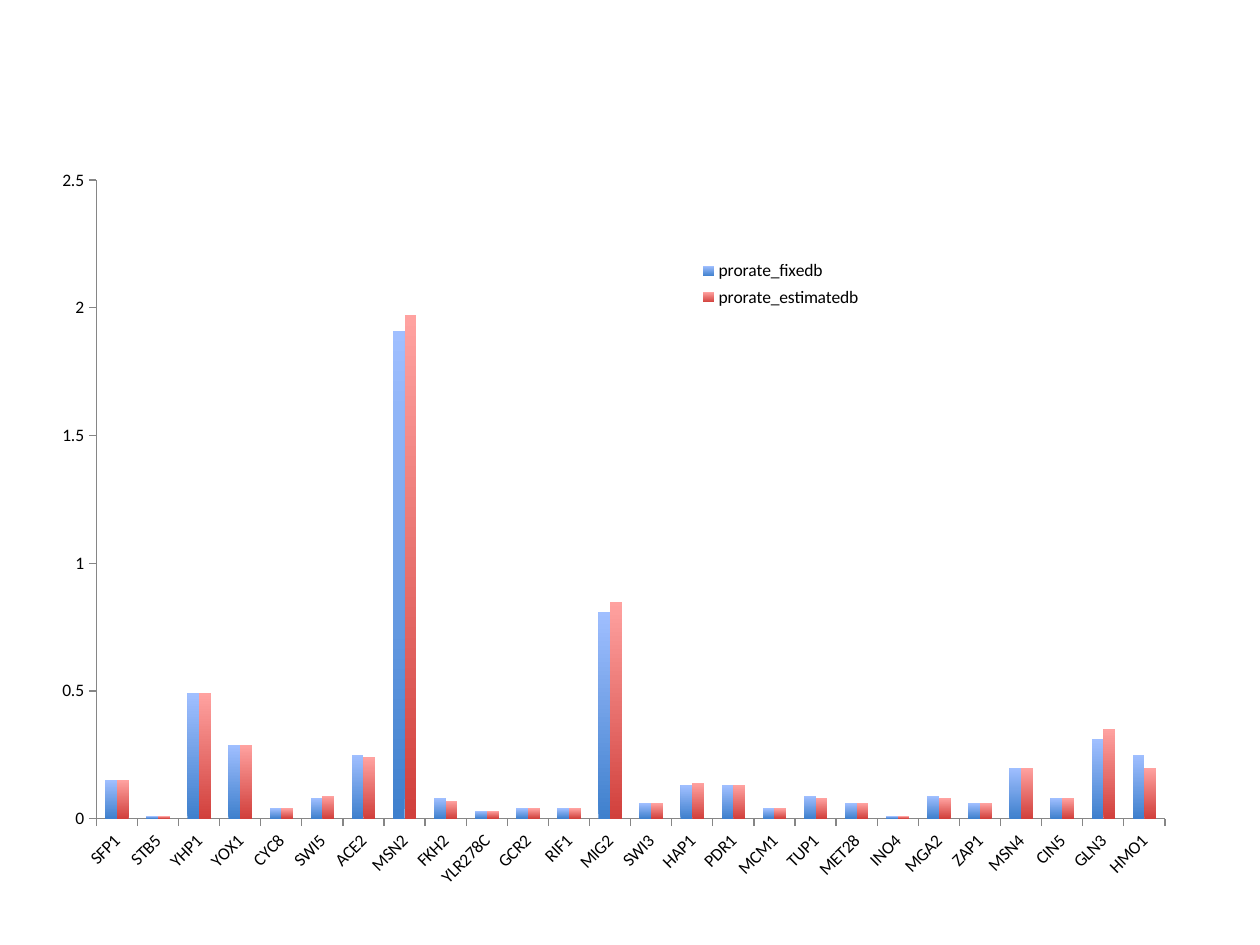
from lxml import etree
from pptx import Presentation
from pptx.chart.data import CategoryChartData
from pptx.dml.color import RGBColor
from pptx.enum.chart import XL_CHART_TYPE, XL_LEGEND_POSITION, XL_TICK_MARK
from pptx.oxml.ns import qn
from pptx.util import Pt

COLUMN_CLUSTERED = XL_CHART_TYPE.COLUMN_CLUSTERED
LEGEND_RIGHT = XL_LEGEND_POSITION.RIGHT
TICK_OUTSIDE = XL_TICK_MARK.OUTSIDE
TICK_NONE = XL_TICK_MARK.NONE

GENES = [
    "SFP1", "STB5", "YHP1", "YOX1", "CYC8", "SWI5", "ACE2", "MSN2", "FKH2",
    "YLR278C", "GCR2", "RIF1", "MIG2", "SWI3", "HAP1", "PDR1", "MCM1", "TUP1",
    "MET28", "INO4", "MGA2", "ZAP1", "MSN4", "CIN5", "GLN3", "HMO1",
]
RATES = {
    "prorate_fixedb": [
        0.15, 0.01, 0.49, 0.29, 0.04, 0.08, 0.25, 1.91, 0.08, 0.03, 0.04, 0.04, 0.81,
        0.06, 0.13, 0.13, 0.04, 0.09, 0.06, 0.01, 0.09, 0.06, 0.2, 0.08, 0.31, 0.25,
    ],
    "prorate_estimatedb": [
        0.15, 0.01, 0.49, 0.29, 0.04, 0.09, 0.24, 1.97, 0.07, 0.03, 0.04, 0.04, 0.85,
        0.06, 0.14, 0.13, 0.04, 0.08, 0.06, 0.01, 0.08, 0.06, 0.2, 0.08, 0.35, 0.2,
    ],
}
GRADIENTS = [("3F80CD", "A0BFFF"), ("D1403C", "FFA2A0")]


def color(value):
    """Turn a hex string into a colour."""
    return RGBColor.from_string(value)


def format_font(font, name="Calibri", size=10, fill="000000"):
    """Set the typeface, size and colour of a font."""
    font.name = name
    font.size = Pt(size)
    font.color.rgb = color(fill)


def make_layout(x, y, w, h, inner=False):
    """Return a manual chart layout in fractions of the chart."""
    layout = etree.Element(qn("c:layout"))
    manual = etree.SubElement(layout, qn("c:manualLayout"))
    settings = [("layoutTarget", "inner")] if inner else []
    settings += [("xMode", "edge"), ("yMode", "edge")]
    settings += [("x", x), ("y", y), ("w", w), ("h", h)]
    for tag, value in settings:
        etree.SubElement(manual, qn(f"c:{tag}")).set("val", str(value))
    return layout


def drop_layout(element):
    """Remove any layout that an element already has."""
    for layout in element.findall(qn("c:layout")):
        element.remove(layout)


def style_axis(axis):
    """Give an axis a grey line, outside ticks and no gridlines."""
    axis.has_major_gridlines = False
    axis.major_tick_mark = TICK_OUTSIDE
    axis.minor_tick_mark = TICK_NONE
    axis.format.line.color.rgb = color("868686")
    axis.format.line.width = Pt(0.75)
    format_font(axis.tick_labels.font)


def style_legend(chart):
    """Place the legend over the empty upper part of the plot."""
    chart.has_legend = True
    legend = chart.legend
    legend.position = LEGEND_RIGHT
    legend.include_in_layout = False
    format_font(legend.font)
    element = chart._chartSpace.find(".//" + qn("c:legend"))
    drop_layout(element)
    element.find(qn("c:legendPos")).addnext(make_layout(0.56, 0.13, 0.15, 0.08))


def add_rate_chart(slide, left, top, width, height):
    """Add the clustered column chart of rates in the given box."""
    data = CategoryChartData(number_format="General")
    data.categories = GENES
    for name, values in RATES.items():
        data.add_series(name, values)
    chart = slide.shapes.add_chart(
        COLUMN_CLUSTERED, Pt(left), Pt(top), Pt(width), Pt(height), data
    ).chart
    chart.has_title = False
    format_font(chart.font)
    plot = chart.plots[0]
    plot.gap_width = 150
    plot.overlap = 0
    plot.vary_by_categories = False
    for series, shades in zip(plot.series, GRADIENTS):
        fill = series.format.fill
        fill.gradient()
        fill.gradient_angle = 90
        for stop, shade in zip(fill.gradient_stops, shades):
            stop.color.rgb = color(shade)
    style_axis(chart.category_axis)
    style_axis(chart.value_axis)
    chart.value_axis.minimum_scale = 0
    chart.value_axis.maximum_scale = 2.5
    chart.value_axis.major_unit = 0.5
    plot_area = chart._chartSpace.find(".//" + qn("c:plotArea"))
    body = plot_area.find(f"{qn('c:catAx')}/{qn('c:txPr')}/{qn('a:bodyPr')}")
    body.set("rot", "-2700000")
    drop_layout(plot_area)
    plot_area.insert(0, make_layout(0.042, 0.029, 0.926, 0.865, inner=True))
    style_legend(chart)


def main():
    """Build and save the presentation."""
    presentation = Presentation()
    presentation.slide_width = Pt(720)
    presentation.slide_height = Pt(540)
    slide = presentation.slides.add_slide(presentation.slide_layouts[6])
    add_rate_chart(slide, 27.36, 90.72, 659.52, 421.92)
    presentation.save("out.pptx")


if __name__ == "__main__":
    main()
